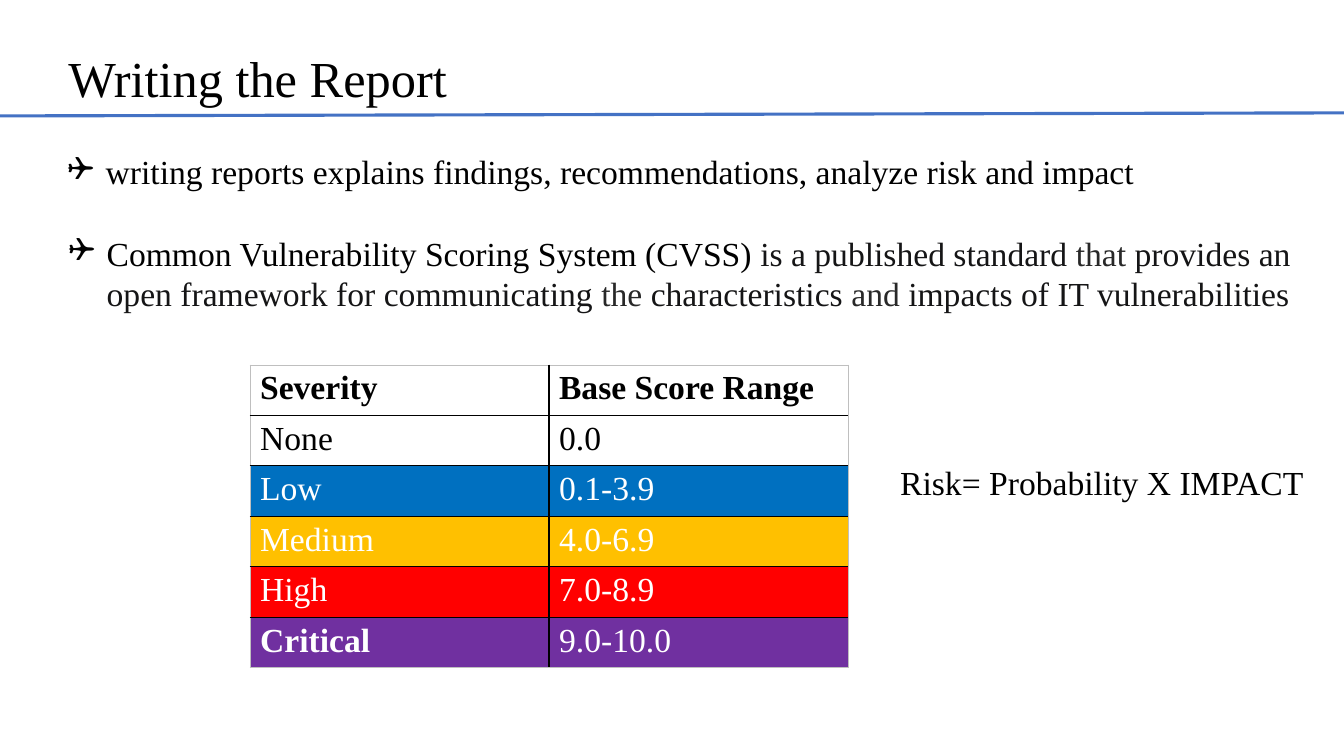
from dataclasses import dataclass

from lxml.etree import SubElement
from pptx import Presentation
from pptx.dml.color import RGBColor
from pptx.enum.shapes import MSO_CONNECTOR as Connector
from pptx.enum.text import MSO_ANCHOR as Anchor
from pptx.oxml.ns import qn
from pptx.util import Inches, Pt


@dataclass(frozen=True)
class Theme:
    font: str = "Times New Roman"
    title_size: int = 36
    body_size: int = 24
    black: str = "000000"
    dark: str = "151516"
    soft: str = "282828"
    white: str = "FFFFFF"
    rule: str = "4472C4"
    frame: str = "BFBFBF"
    low: str = "0070C0"
    medium: str = "FFC000"
    high: str = "FF0000"
    critical: str = "7030A0"


THEME = Theme()

STANDARD = [
    ("Common Vulnerability Scoring System (CVSS) ", THEME.black),
    ("is a published standard ", THEME.dark),
    ("that ", THEME.soft),
    ("provides an open framework for communicating ", THEME.dark),
    ("the ", THEME.soft),
    ("characteristics ", THEME.dark),
    ("and ", THEME.soft),
    ("impacts of IT vulnerabilities", THEME.dark),
]
PURPOSE = [("writing reports explains findings, recommendations, "
            "analyze risk and impact", THEME.black)]

# Severity, score range, fill, text colour, bold flag of each column
SEVERITIES = [
    ("Severity", "Base Score Range", THEME.white, THEME.black, (True, True)),
    ("None", "0.0", THEME.white, THEME.black, (False, False)),
    ("Low", "0.1-3.9", THEME.low, THEME.white, (False, False)),
    ("Medium", "4.0-6.9", THEME.medium, THEME.white, (False, False)),
    ("High", "7.0-8.9", THEME.high, THEME.white, (False, False)),
    ("Critical", "9.0-10.0", THEME.critical, THEME.white, (True, False)),
]


def add_run(paragraph, words, color, size=THEME.body_size, bold=False):
    run = paragraph.add_run()
    run.text = words
    run.font.name = THEME.font
    run.font.size = Pt(size)
    run.font.bold = bold
    run.font.color.rgb = RGBColor.from_string(color)


def add_text(slide, box, runs, size=THEME.body_size, anchor=Anchor.TOP):
    frame = slide.shapes.add_textbox(*map(Inches, box)).text_frame
    frame.word_wrap = True
    frame.vertical_anchor = anchor
    paragraph = frame.paragraphs[0]
    for words, color in runs:
        add_run(paragraph, words, color, size)
    return paragraph


def add_heading(slide, box):
    title = add_text(slide, box, [("Writing the Report", THEME.black)],
                     THEME.title_size, Anchor.MIDDLE)
    title.line_spacing = 0.9


def add_rule(slide, box):
    left, top, width, height = box
    rule = slide.shapes.add_connector(
        Connector.STRAIGHT, Inches(left + width), Inches(top),
        Inches(left), Inches(top + height))
    rule.line.color.rgb = RGBColor.from_string(THEME.rule)
    rule.line.width = Pt(2.25)
    SubElement(rule._element.spPr, qn("a:effectLst"))


def add_bullet(slide, box, runs):
    properties = add_text(slide, box, runs)._p.get_or_add_pPr()
    indent = Inches(0.38)
    properties.set("marL", str(indent))
    properties.set("indent", str(-indent))
    SubElement(properties, qn("a:buFont"), typeface="Wingdings")
    SubElement(properties, qn("a:buChar"), char="❑")


def set_border(cell, side, color, points):
    border = SubElement(cell._tc.get_or_add_tcPr(), qn(f"a:ln{side}"),
                        w=str(Pt(points)))
    fill = SubElement(border, qn("a:solidFill"))
    SubElement(fill, qn("a:srgbClr"), val=color)


def add_severity_table(slide, box):
    rows, columns = len(SEVERITIES), 2
    table = slide.shapes.add_table(rows, columns, *map(Inches, box)).table
    for r, (severity, score, fill, color, bolds) in enumerate(SEVERITIES):
        for c, words in enumerate((severity, score)):
            cell = table.cell(r, c)
            # Black lines between cells, a thin grey frame around them
            outer = {"L": c == 0, "R": c == columns - 1,
                     "T": r == 0, "B": r == rows - 1}
            for side, is_outer in outer.items():
                if is_outer:
                    set_border(cell, side, THEME.frame, 0.5)
                else:
                    set_border(cell, side, THEME.black, 1)
            cell.fill.solid()
            cell.fill.fore_color.rgb = RGBColor.from_string(fill)
            add_run(cell.text_frame.paragraphs[0], words, color,
                    bold=bolds[c])


def main():
    deck = Presentation()
    deck.slide_width, deck.slide_height = Inches(13.33), Inches(7.5)
    slide = deck.slides.add_slide(deck.slide_layouts[6])

    # Heading
    add_heading(slide, (0.58, 0.29, 11.5, 1.03))
    add_rule(slide, (0, 1.12, 13.33, 0.03))

    # Points
    add_bullet(slide, (0.57, 1.45, 12.2, 0.5), PURPOSE)
    add_bullet(slide, (0.58, 2.26, 12.4, 0.91), STANDARD)

    # Scores and formula
    add_severity_table(slide, (2.48, 3.62, 5.93, 3))
    add_text(slide, (8.83, 4.53, 4.28, 0.5),
             [("Risk= Probability X IMPACT", THEME.black)])

    deck.save("out.pptx")


if __name__ == "__main__":
    main()
